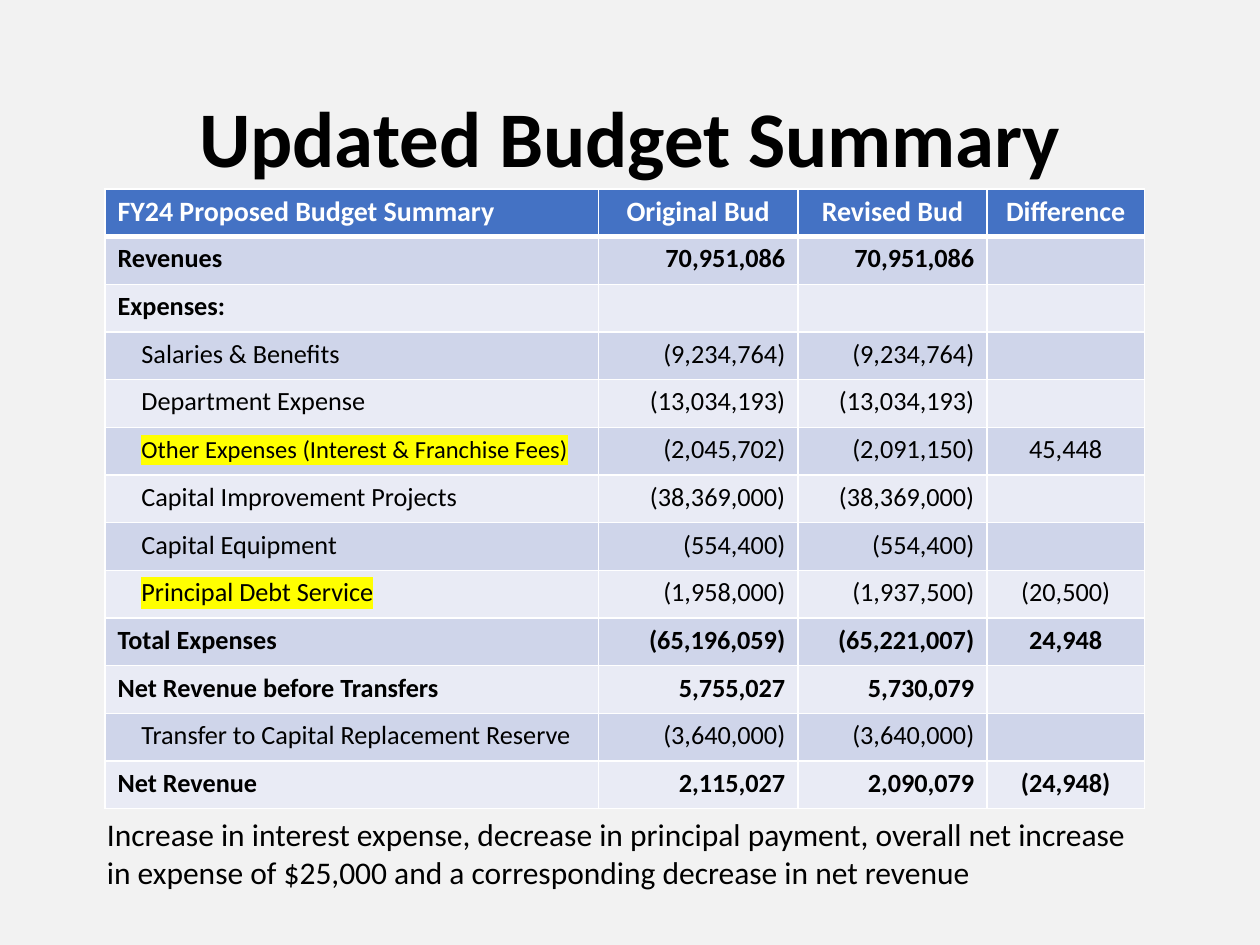
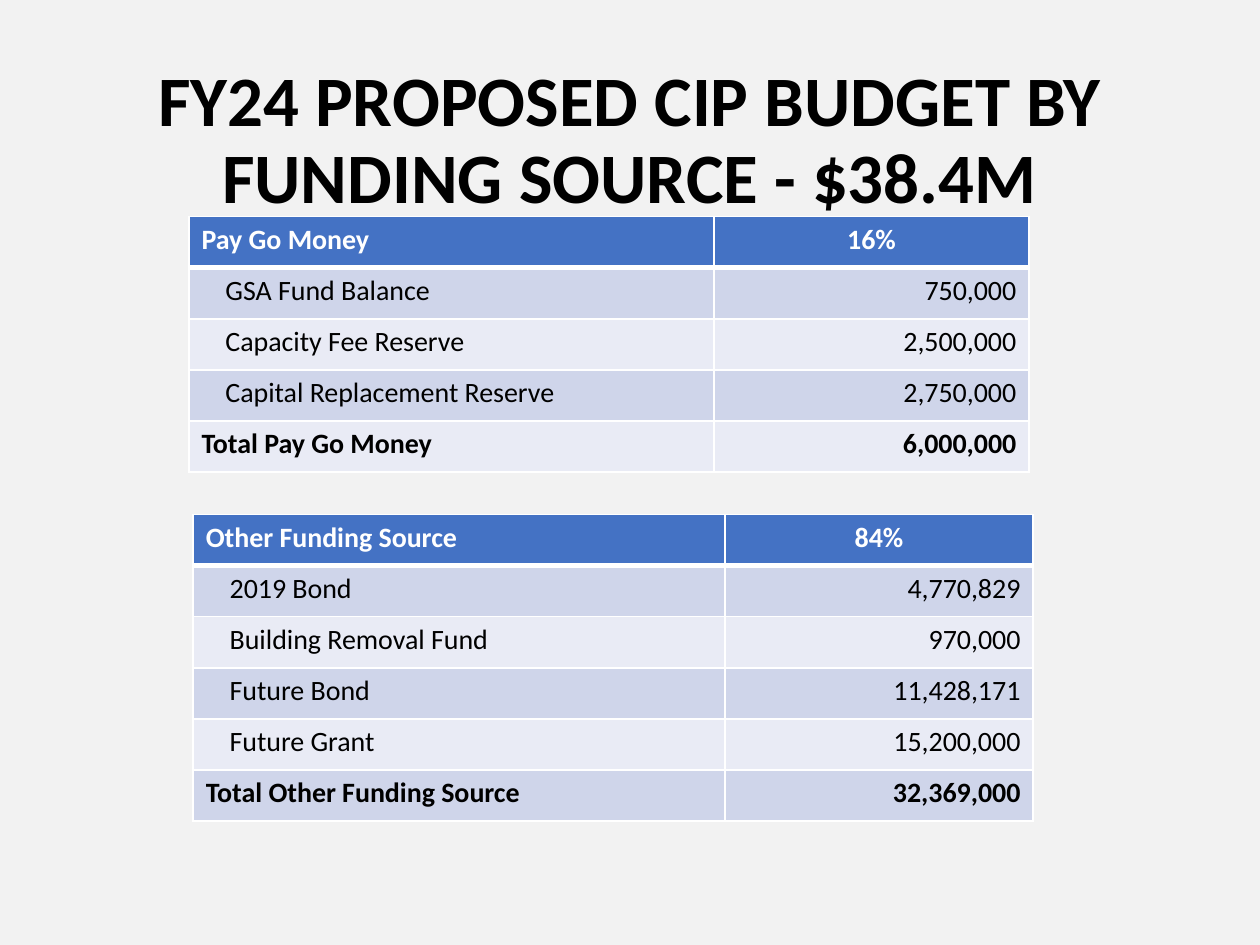
from typing import NamedTuple

from lxml import etree
from pptx import Presentation
from pptx import util as u
from pptx.dml.color import RGBColor
from pptx.enum import text
from pptx.oxml.ns import qn

FONT = "Calibri"
PAGE, HEADER, BANDS = "F2F2F2", "4472C4", ("CFD5EA", "E9EBF5")
WHITE, BLACK, MARKER = "FFFFFF", "000000", "FFFF00"
HEADER_SIZE = 16
INDENT = 13.6
LEFT, CENTER, RIGHT = text.PP_ALIGN.LEFT, text.PP_ALIGN.CENTER, text.PP_ALIGN.RIGHT


class Line(NamedTuple):
    """A budget line; detail lines are indented and regular, the others bold."""
    label: str
    amounts: tuple[str, ...] = ()
    detail: bool = False
    marked: bool = False
    marked_indent: bool = False
    label_size: float = 0


class Budget(NamedTuple):
    left: float
    top: float
    columns: tuple[float, ...]
    row_height: float
    size: float
    aligns: tuple
    headings: tuple[str, ...]
    lines: tuple[Line, ...]


SUMMARY = Budget(
    60, 108, (282, 114, 108, 90), 27.25, 15, (LEFT, RIGHT, RIGHT, CENTER),
    ("FY24 Proposed Budget Summary", "Original Bud", "Revised Bud", "Difference"),
    (
        Line("Revenues", ("70,951,086", "70,951,086")),
        Line("Expenses:"),
        Line("Salaries & Benefits", ("(9,234,764)", "(9,234,764)"), detail=True),
        Line("Department Expense", ("(13,034,193)", "(13,034,193)"), detail=True),
        Line("Other Expenses (Interest & Franchise Fees)",
             ("(2,045,702)", "(2,091,150)", "45,448"),
             detail=True, marked=True, marked_indent=True, label_size=14),
        Line("Capital Improvement Projects", ("(38,369,000)", "(38,369,000)"), detail=True),
        Line("Capital Equipment", ("(554,400)", "(554,400)"), detail=True),
        Line("Principal Debt Service", ("(1,958,000)", "(1,937,500)", "(20,500)"),
             detail=True, marked=True),
        Line("Total Expenses", ("(65,196,059)", "(65,221,007)", "24,948")),
        Line("Net Revenue before Transfers", ("5,755,027", "5,730,079")),
        Line("Transfer to Capital Replacement Reserve", ("(3,640,000)", "(3,640,000)"),
             detail=True),
        Line("Net Revenue", ("2,115,027", "2,090,079", "(24,948)")),
    ),
)

PAY_GO = Budget(
    108, 123.8, (300, 180), 29.2, 16, (LEFT, RIGHT), ("Pay Go Money", "16%"),
    (
        Line("GSA Fund Balance", ("750,000",), detail=True),
        Line("Capacity Fee Reserve", ("2,500,000",), detail=True),
        Line("Capital Replacement Reserve", ("2,750,000",), detail=True),
        Line("Total Pay Go Money", ("6,000,000",)),
    ),
)

OTHER_FUNDING = Budget(
    110.4, 294, (303.8, 176.2), 29.2, 16, (LEFT, RIGHT), ("Other Funding Source", "84%"),
    (
        Line("2019 Bond", ("4,770,829",), detail=True),
        Line("Building Removal Fund", ("970,000",), detail=True),
        Line("Future Bond", ("11,428,171",), detail=True),
        Line("Future Grant", ("15,200,000",), detail=True),
        Line("Total Other Funding Source", ("32,369,000",)),
    ),
)


def rgb(value: str) -> RGBColor:
    return RGBColor.from_string(value)


def style_run(run, size: float, color: str = BLACK, bold: bool = False,
              marked: bool = False) -> None:
    font = run.font
    font.name, font.size, font.bold = FONT, u.Pt(size), bold
    font.color.rgb = rgb(color)
    if marked:
        highlight = etree.Element(qn("a:highlight"))
        etree.SubElement(highlight, qn("a:srgbClr"), val=MARKER)
        run._r.rPr.find(qn("a:solidFill")).addnext(highlight)


def add_words(slide, words: str, box: tuple[float, ...], size: float, bold: bool = False):
    """Add a wrapping text box of one paragraph and return its text frame."""
    frame = slide.shapes.add_textbox(*map(u.Pt, box)).text_frame
    frame.word_wrap = True
    frame.text = words
    style_run(frame.paragraphs[0].runs[0], size, bold=bold)
    return frame


def add_slide(deck, title: str, size: float):
    slide = deck.slides.add_slide(deck.slide_layouts[6])
    slide.background.fill.solid()
    slide.background.fill.fore_color.rgb = rgb(PAGE)
    frame = add_words(slide, title, (49.5, 28.8, 621, 104.4), size, bold=True)
    frame.vertical_anchor = text.MSO_ANCHOR.MIDDLE
    frame.paragraphs[0].alignment = CENTER
    frame.paragraphs[0].line_spacing = 0.9
    return slide


def paint_cell(cell, row: int) -> None:
    """Give a cell white rules, thick under the header, and its band colour."""
    widths = {"lnL": 1, "lnR": 1, "lnT": 3 if row == 1 else 1, "lnB": 3 if row == 0 else 1}
    properties = cell._tc.get_or_add_tcPr()
    for side, width in widths.items():
        rule = etree.SubElement(properties, qn(f"a:{side}"), w=str(u.Pt(width)))
        fill = etree.SubElement(rule, qn("a:solidFill"))
        etree.SubElement(fill, qn("a:srgbClr"), val=WHITE)
    cell.fill.solid()
    cell.fill.fore_color.rgb = rgb(BANDS[(row - 1) % 2] if row else HEADER)


def write_cell(cell, words: str, align, size: float, color: str, bold: bool) -> None:
    paragraph = cell.text_frame.paragraphs[0]
    paragraph.alignment = align
    if words:
        paragraph.text = words
        style_run(paragraph.runs[0], size, color, bold)
    else:
        etree.SubElement(paragraph._p, qn("a:endParaRPr"), sz=str(int(size * 100)))


def write_detail_label(cell, line: Line, size: float) -> None:
    """Write an indented label; the indent is a tab so that it can be marked too."""
    paragraph = cell.text_frame.paragraphs[0]
    stops = etree.SubElement(paragraph._p.get_or_add_pPr(), qn("a:tabLst"))
    etree.SubElement(stops, qn("a:tab"), pos=str(u.Pt(INDENT)), algn="l")
    indent, label = paragraph.add_run(), paragraph.add_run()
    indent.text, label.text = "\t", line.label
    style_run(indent, size, marked=line.marked_indent)
    style_run(label, line.label_size or size, marked=line.marked)


def add_budget(slide, budget: Budget) -> None:
    row_count, column_count = len(budget.lines) + 1, len(budget.columns)
    table = slide.shapes.add_table(
        row_count, column_count, u.Pt(budget.left), u.Pt(budget.top),
        u.Pt(sum(budget.columns)), u.Pt(budget.row_height * row_count)).table
    table.horz_banding = False
    for column, width in zip(table.columns, budget.columns):
        column.width = u.Pt(width)
    for row in table.rows:
        row.height = u.Pt(budget.row_height)

    for i, heading in enumerate(budget.headings):
        cell = table.cell(0, i)
        paint_cell(cell, 0)
        write_cell(cell, heading, CENTER if i else LEFT, HEADER_SIZE, WHITE, True)

    for row, line in enumerate(budget.lines, start=1):
        blanks = ("",) * (column_count - 1 - len(line.amounts))
        for i, words in enumerate((line.label, *line.amounts, *blanks)):
            cell = table.cell(row, i)
            paint_cell(cell, row)
            if line.detail and i == 0:
                write_detail_label(cell, line, budget.size)
            else:
                write_cell(cell, words, budget.aligns[i], budget.size, BLACK, not line.detail)


def main() -> None:
    deck = Presentation()
    deck.slide_width, deck.slide_height = u.Pt(720), u.Pt(540)

    summary = add_slide(deck, "Updated Budget Summary", 45)
    add_budget(summary, SUMMARY)
    add_words(summary, "Increase in interest expense, decrease in principal payment, overall net "
              "increase in expense of $25,000 and a corresponding decrease in net revenue",
              (54, 462.2, 600, 51), 18)

    funding = add_slide(deck, "FY24 PROPOSED CIP BUDGET BY FUNDING SOURCE - $38.4M", 40.5)
    for budget in (PAY_GO, OTHER_FUNDING):
        add_budget(funding, budget)

    deck.save("out.pptx")


if __name__ == "__main__":
    main()
